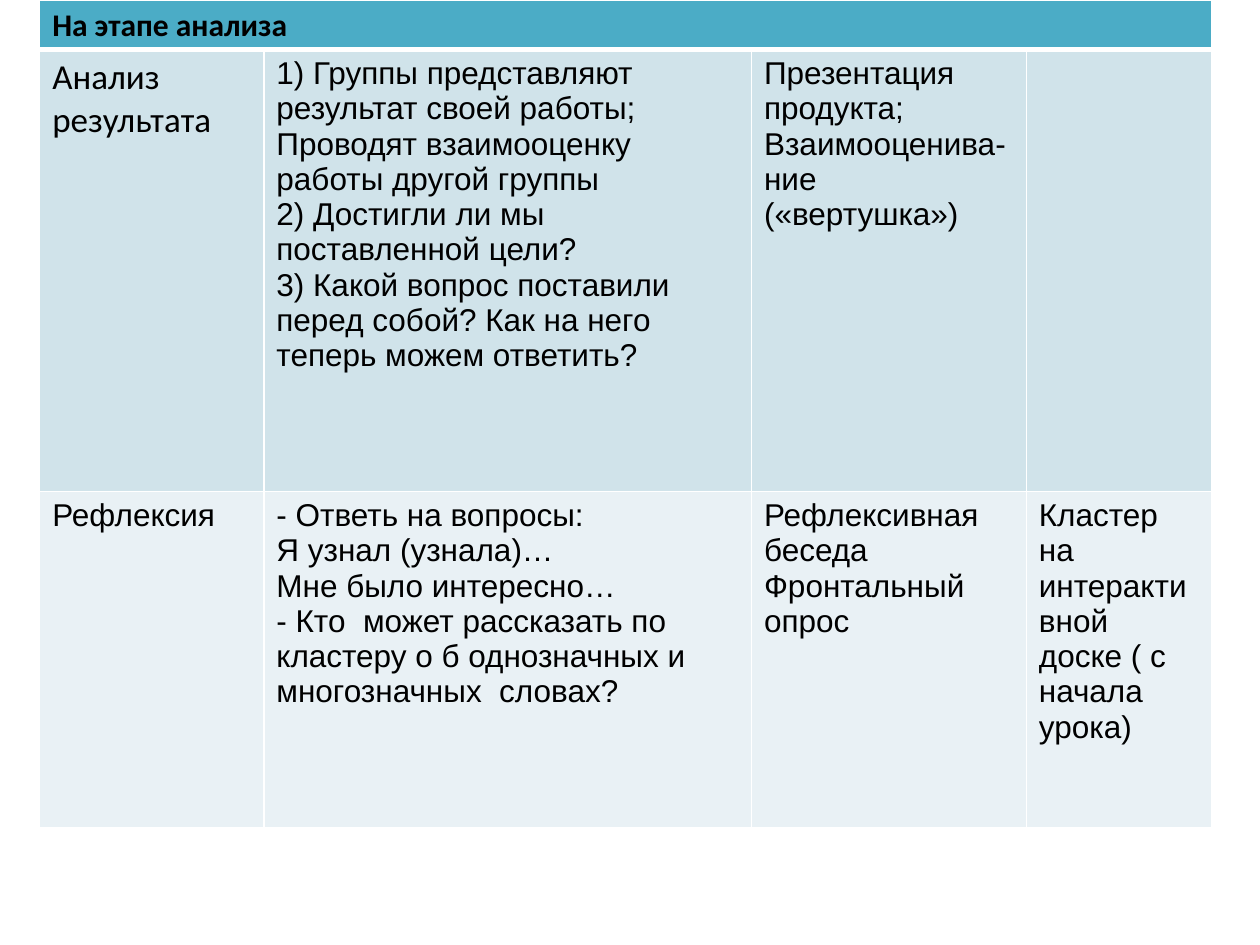
import pptx
import pptx.util
import pptx.dml.color
import pptx.oxml
import pptx.oxml.ns
from pptx.util import Cm, Pt


def rgb(value):
    return pptx.dml.color.RGBColor.from_string(value)


def set_borders(cell, widths):
    tcPr = cell._tc.get_or_add_tcPr()
    for i, (side, width) in enumerate(widths.items()):
        tcPr.insert(i, pptx.oxml.parse_xml(
            f'<a:{side} {pptx.oxml.ns.nsdecls("a")} w="{Pt(width)}">'
            f'<a:solidFill><a:srgbClr val="FFFFFF"/></a:solidFill></a:{side}>'))


prs = pptx.Presentation()
prs.slide_width, prs.slide_height = Cm(25.4), Cm(19.05)
s = prs.slides.add_slide(prs.slide_layouts[6])

rows = [
    [["На этапе анализа"], [], [], []],
    [
        ["Анализ результата"],
        ["1) Группы представляют результат своей работы;",
         "Проводят взаимооценку работы другой группы",
         "2) Достигли ли мы поставленной цели?",
         "3) Какой вопрос поставили перед собой? Как на него теперь можем ответить?"],
        ["Презентация продукта;", "Взаимооценива-ние («вертушка»)"],
        [],
    ],
    [
        ["Рефлексия"],
        ["- Ответь на вопросы:",
         "Я узнал (узнала)…",
         "Мне было интересно…",
         "- Кто  может рассказать по кластеру о б однозначных и многозначных  словах?"],
        ["Рефлексивная беседа", "Фронтальный опрос"],
        ["Кластер на интерактивной доске ( с начала урока)"],
    ],
]
fills = ["4BACC6", "D0E3EA", "E9F1F5"]
col_widths = [4.52, 9.83, 5.54, 3.73]
row_heights = [1, 8.91, 6.78]
body = {"name": "Arial", "size": Pt(18), "bold": False}
formats = {
    (0, 0): {"name": "Calibri", "size": Pt(18), "bold": True},
    (1, 0): {"name": "Calibri", "size": Pt(20), "bold": False},
}

table = s.shapes.add_table(3, 4, Cm(0.8), Cm(0), Cm(sum(col_widths)),
                           Cm(sum(row_heights))).table
for column, width in zip(table.columns, col_widths):
    column.width = Cm(width)
for row, height in zip(table.rows, row_heights):
    row.height = Cm(height)
table.cell(0, 0).merge(table.cell(0, 3))

for i, row in enumerate(rows):
    for j, lines in enumerate(row):
        cell = table.cell(i, j)
        cell.fill.solid()
        cell.fill.fore_color.rgb = rgb(fills[i])
        set_borders(cell, {"lnL": 1, "lnR": 1, "lnT": 3 if i == 1 else 1,
                           "lnB": 3 if i == 0 else 1})
        if i == 0:
            cell.margin_bottom = Cm(0)
        tf = cell.text_frame
        for n, line in enumerate(lines):
            p = tf.add_paragraph() if n else tf.paragraphs[0]
            r = p.add_run()
            r.text = line
            for key, value in formats.get((i, j), body).items():
                setattr(r.font, key, value)
            r.font.color.rgb = rgb("000000")

prs.save("out.pptx")
